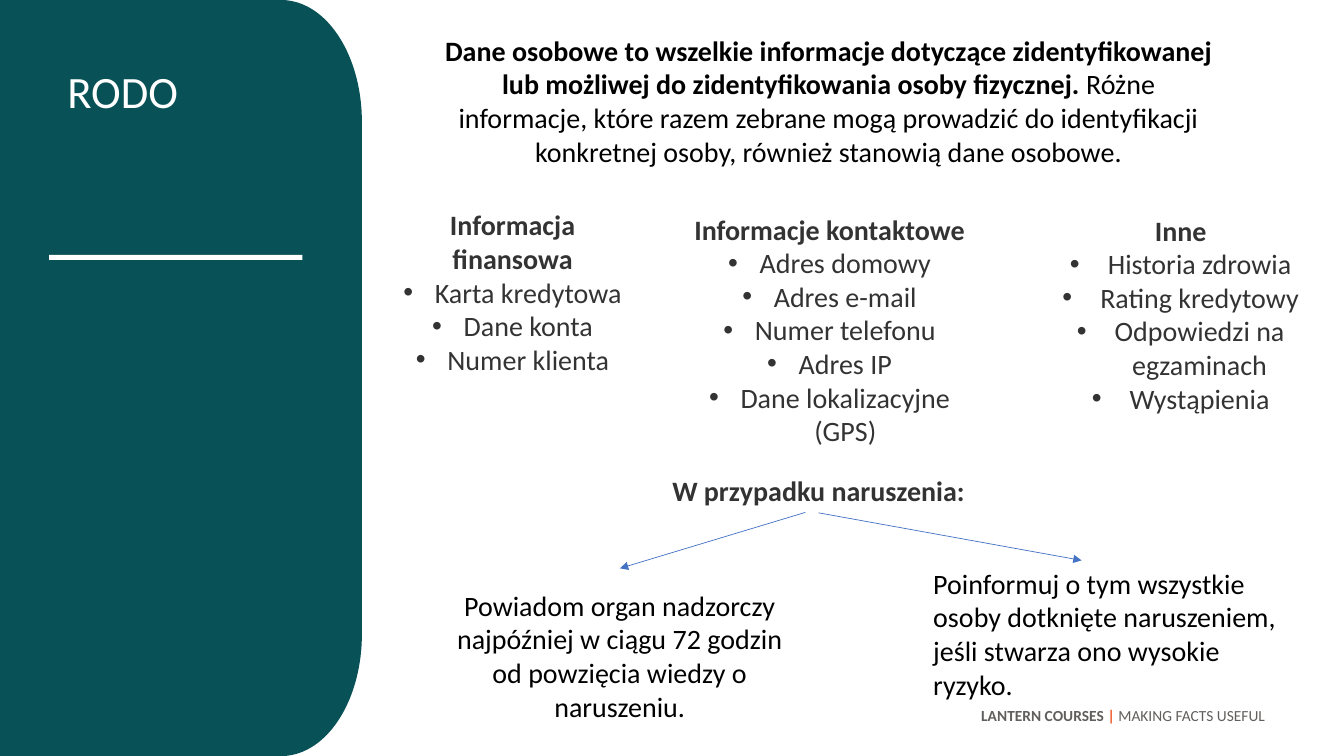
"""Build the RODO slide on personal data and breach notification."""
from dataclasses import dataclass

from lxml import etree
from pptx import Presentation
from pptx import util as u
from pptx.dml.color import RGBColor
from pptx.enum import shapes, text
from pptx.oxml import ns

Pt = u.Pt


@dataclass(frozen=True)
class Theme:
    font: str = "Calibri"
    panel: str = "085156"
    white: str = "FFFFFF"
    black: str = "000000"
    dark: str = "333333"
    gray: str = "615F5D"
    orange: str = "F15A2A"
    arrow: str = "4472C4"
    title: int = 32
    body: int = 20
    footer: int = 11


theme = Theme()
LEFT, CENTER, RIGHT = text.PP_ALIGN.LEFT, text.PP_ALIGN.CENTER, text.PP_ALIGN.RIGHT


def add_block(parent, kind, box, color, rotation=0):
    shape = parent.add_shape(kind, *map(Pt, box))
    shape.shadow.inherit = False
    shape.fill.solid()
    shape.fill.fore_color.rgb = RGBColor.from_string(color)
    shape.line.fill.background()
    shape.rotation = rotation


def add_text(box, paragraphs, size, align, indent=0, grow=True):
    shape = slide.shapes.add_textbox(*map(Pt, box))
    frame = shape.text_frame
    frame.word_wrap = True
    if grow:
        frame.auto_size = text.MSO_AUTO_SIZE.SHAPE_TO_FIT_TEXT
    for index, runs in enumerate(paragraphs):
        paragraph = frame.add_paragraph() if index else frame.paragraphs[0]
        paragraph.alignment = align
        if indent and index:
            properties = paragraph._p.get_or_add_pPr()
            properties.set("marL", str(Pt(indent)))
            properties.set("indent", str(-Pt(indent)))
            etree.SubElement(properties, ns.qn("a:buFont")).set("typeface", "Arial")
            etree.SubElement(properties, ns.qn("a:buChar")).set("char", "•")
        for words, color, bold in runs:
            run = paragraph.add_run()
            run.text = words
            run.font.name = theme.font
            run.font.size = Pt(size)
            run.font.bold = bold
            run.font.color.rgb = RGBColor.from_string(color)
    return shape


presentation = Presentation()
presentation.slide_width, presentation.slide_height = Pt(960), Pt(540)
slide = presentation.slides.add_slide(presentation.slide_layouts[6])

panel = slide.shapes.add_group_shape()
add_block(panel.shapes, shapes.MSO_SHAPE.RECTANGLE, (-170, 169, 540, 202), theme.panel, 270)
add_block(panel.shapes, shapes.MSO_SHAPE.FLOWCHART_TERMINATOR, (-69, 212.5, 540, 115), theme.panel, 270)
add_block(slide.shapes, shapes.MSO_SHAPE.RECTANGLE, (35, 182, 181, 3.6), theme.white)

footer = add_text((41, 500.8, 869.8, 32.4), [[
    ("LANTERN COURSES ", theme.gray, True),
    ("|", theme.orange, True),
    (" MAKING FACTS USEFUL", theme.gray, False),
]], theme.footer, RIGHT, grow=False)
footer.text_frame.paragraphs[0].space_before = Pt(2.2)

add_text((41, 41.8, 196.6, 46), [[("RODO", theme.white, False)]], theme.title, LEFT)
add_text((309.6, 20.2, 564.5, 104.4), [[
    ("Dane osobowe to wszelkie informacje dotyczące zidentyfikowanej "
     "lub możliwej do zidentyfikowania osoby fizycznej.", theme.black, True),
    (" Różne informacje, które razem zebrane mogą prowadzić do identyfikacji "
     "konkretnej osoby, również stanowią dane osobowe.", theme.black, False),
]], theme.body, CENTER)

categories = [
    ((277.9, 145, 176.4, 152.6), 22.5, "Informacja finansowa",
     ["Karta kredytowa", "Dane konta", "Numer klienta"]),
    ((482.4, 147.9, 220.3, 177.1), 22.5, "Informacje kontaktowe",
     ["Adres domowy", "Adres e-mail", "Numer telefonu", "Adres IP",
      "Dane lokalizacyjne (GPS)"]),
    ((742.6, 148.6, 201.6, 152.6), 27, "Inne",
     ["Historia zdrowia", "Rating kredytowy", "Odpowiedzi na egzaminach",
      "Wystąpienia"]),
]
for box, indent, heading, items in categories:
    paragraphs = [[(heading, theme.dark, True)]]
    paragraphs += [[(item, theme.dark, False)] for item in items]
    add_text(box, paragraphs, theme.body, CENTER, indent)

breach = add_text((419.8, 334.8, 329.8, 31.5),
                  [[("W przypadku naruszenia:", theme.dark, True)]], theme.body, CENTER)

duties = [
    ((659.5, 401, 270, 104.4), LEFT,
     "Poinformuj o tym wszystkie osoby dotknięte naruszeniem, "
     "jeśli stwarza ono wysokie ryzyko."),
    ((310.6, 416.7, 264.2, 104.4), CENTER,
     "Powiadom organ nadzorczy najpóźniej w ciągu 72 godzin "
     "od powzięcia wiedzy o naruszeniu."),
]
for box, align, words in duties:
    add_text(box, [[(words, theme.black, False)]], theme.body, align)

arrows = [((575.3, 366), (442.8, 406), False), ((584.7, 366.3), (772.6, 400.3), True)]
for start, end, joined in arrows:
    arrow = slide.shapes.add_connector(
        shapes.MSO_CONNECTOR.STRAIGHT, *map(Pt, start + end))
    if joined:
        arrow.begin_connect(breach, 2)
    arrow.line.color.rgb = RGBColor.from_string(theme.arrow)
    arrow.line.width = Pt(0.5)
    etree.SubElement(arrow.line._get_or_add_ln(), ns.qn("a:tailEnd")).set("type", "triangle")
    etree.SubElement(arrow._element.spPr, ns.qn("a:effectLst"))

presentation.save("out.pptx")
